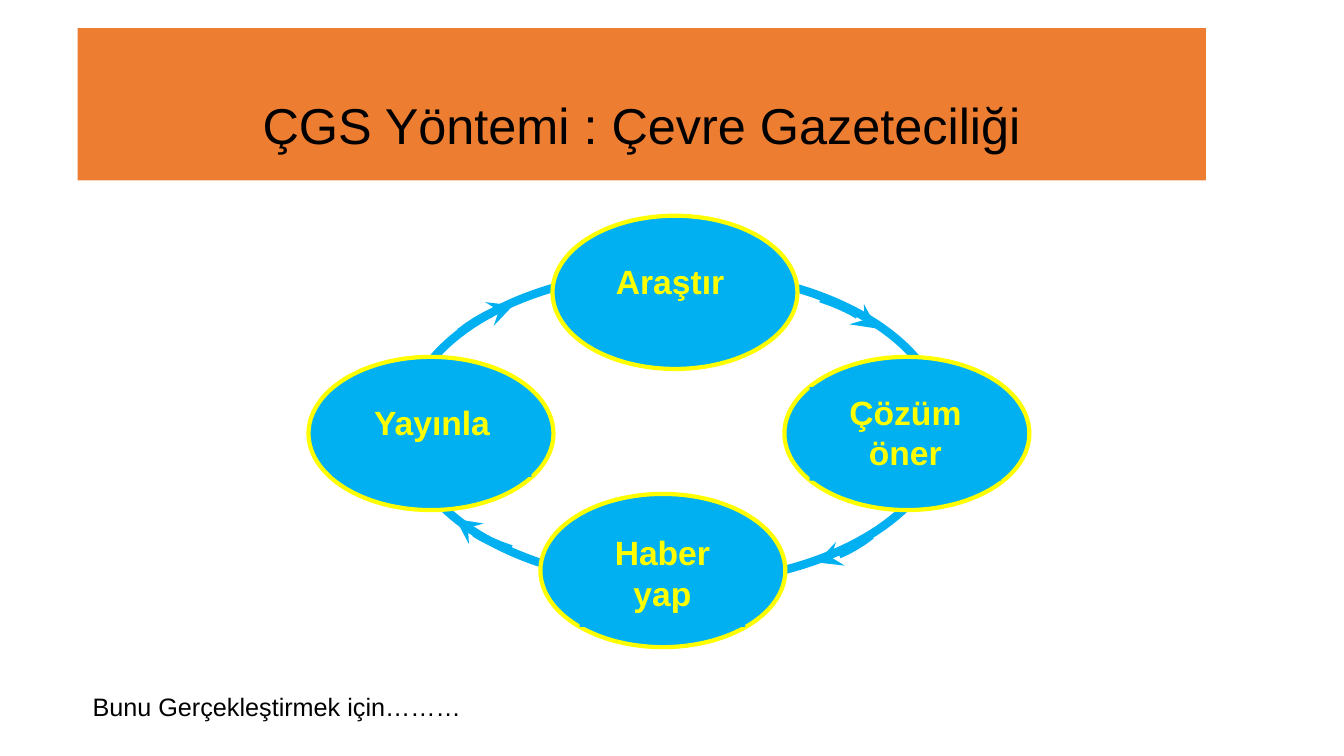
from lxml.etree import SubElement
from pptx import Presentation
from pptx.dml.color import RGBColor
from pptx.enum.shapes import MSO_SHAPE
from pptx.enum.text import MSO_ANCHOR, PP_ALIGN
from pptx.oxml.ns import qn
from pptx.util import Inches, Pt

COLORS = {"banner": "ED7D31", "cycle": "00B0F0", "accent": "FFFF00",
          "paper": "FFFFFF", "ink": "000000"}
FONT = "Arial"
TITLE = "ÇGS Yöntemi : Çevre Gazeteciliği"
FOOTNOTE = "Bunu Gerçekleştirmek için………"
RING = (4.02, 2.69, 5.34, 3.1)
NODE_SIZE = (2.43, 1.52)

# Lines, node corner, label frame, alignment, space after in points
STEPS = [
    (["Yayınla"], (3.06, 3.54), (3.3, 3.94, 1.97, 0.79), PP_ALIGN.CENTER, 10),
    (["Araştır"], (5.48, 2.14), (6.01, 2.54, 1.45, 0.78), PP_ALIGN.LEFT, 10),
    (["Çözüm öner"], (7.78, 3.54), (8.03, 3.84, 1.9, 0.93), PP_ALIGN.CENTER, 10),
    (["Haber", "yap"], (5.36, 4.9), (5.75, 5.23, 1.64, 0.99), PP_ALIGN.CENTER, 0),
]

# Start, two control points and end of each curved arrow
ARROWS = [
    [(8.14, 2.96), (8.36, 3.03), (8.55, 3.13), (8.7, 3.26)],
    [(5.07, 5.45), (4.85, 5.38), (4.67, 5.28), (4.52, 5.15)],
    [(8.64, 5.31), (8.49, 5.43), (8.31, 5.52), (8.1, 5.58)],
    [(4.56, 3.3), (4.71, 3.18), (4.89, 3.08), (5.09, 3.03)],
]
CURVE_STEPS = 6


def curve_point(controls, t):
    weights = ((1 - t) ** 3, 3 * t * (1 - t) ** 2, 3 * t ** 2 * (1 - t), t ** 3)
    return tuple(Inches(sum(w * point[axis] for w, point in zip(weights, controls)))
                 for axis in (0, 1))


def style(shape, fill=None, line=None, width=0):
    shape.shadow.inherit = False
    if fill:
        shape.fill.solid()
        shape.fill.fore_color.rgb = RGBColor.from_string(COLORS[fill])
    else:
        shape.fill.background()
    if line:
        shape.line.color.rgb = RGBColor.from_string(COLORS[line])
        shape.line.width = Pt(width)
    else:
        shape.line.fill.background()


def add_block(page, kind, frame, **look):
    shape = page.shapes.add_shape(kind, *map(Inches, frame))
    style(shape, **look)
    return shape


def write(box, lines, size, color, align, bold=False, after=0, anchor=MSO_ANCHOR.TOP):
    frame = box.text_frame
    frame.vertical_anchor = anchor
    for index, line in enumerate(lines):
        para = frame.add_paragraph() if index else frame.paragraphs[0]
        para.alignment = align
        para.space_after = Pt(after)
        span = para.add_run()
        span.text = line
        span.font.name = FONT
        span.font.size = Pt(size)
        span.font.bold = bold
        span.font.color.rgb = RGBColor.from_string(COLORS[color])


def add_arrow(page, controls):
    points = [curve_point(controls, i / CURVE_STEPS) for i in range(CURVE_STEPS + 1)]
    builder = page.shapes.build_freeform(*points[0])
    builder.add_line_segments(points[1:], close=False)
    arrow = builder.convert_to_shape()
    style(arrow, line="cycle", width=6)
    outline = arrow.element.spPr.find(qn("a:ln"))
    SubElement(outline, qn("a:tailEnd"), type="stealth")


def main():
    deck = Presentation()
    deck.slide_width, deck.slide_height = Inches(13.33), Inches(7.5)
    page = deck.slides.add_slide(deck.slide_layouts[6])

    # Ring and its direction arrows
    add_block(page, MSO_SHAPE.OVAL, RING, fill="paper", line="cycle", width=6)
    for controls in ARROWS:
        add_arrow(page, controls)

    # Steps of the cycle
    for lines, corner, label_frame, align, after in STEPS:
        add_block(page, MSO_SHAPE.OVAL, corner + NODE_SIZE,
                  fill="cycle", line="accent", width=3)
        label = add_block(page, MSO_SHAPE.RECTANGLE, label_frame, fill="cycle")
        label.text_frame.word_wrap = True
        write(label, lines, 24, "accent", align, bold=True, after=after)

    # Title banner
    banner = add_block(page, MSO_SHAPE.RECTANGLE, (0.77, 0.28, 11.19, 1.51), fill="banner")
    banner.text_frame.word_wrap = True
    banner.text_frame.margin_bottom = Inches(0.26)
    write(banner, [TITLE], 36, "ink", PP_ALIGN.CENTER, anchor=MSO_ANCHOR.BOTTOM)

    # Closing line
    note = page.shapes.add_textbox(*map(Inches, (0.82, 6.81, 3.96, 0.4)))
    note.text_frame.word_wrap = False
    write(note, [FOOTNOTE], 18, "ink", PP_ALIGN.LEFT)

    deck.save("out.pptx")


if __name__ == "__main__":
    main()
